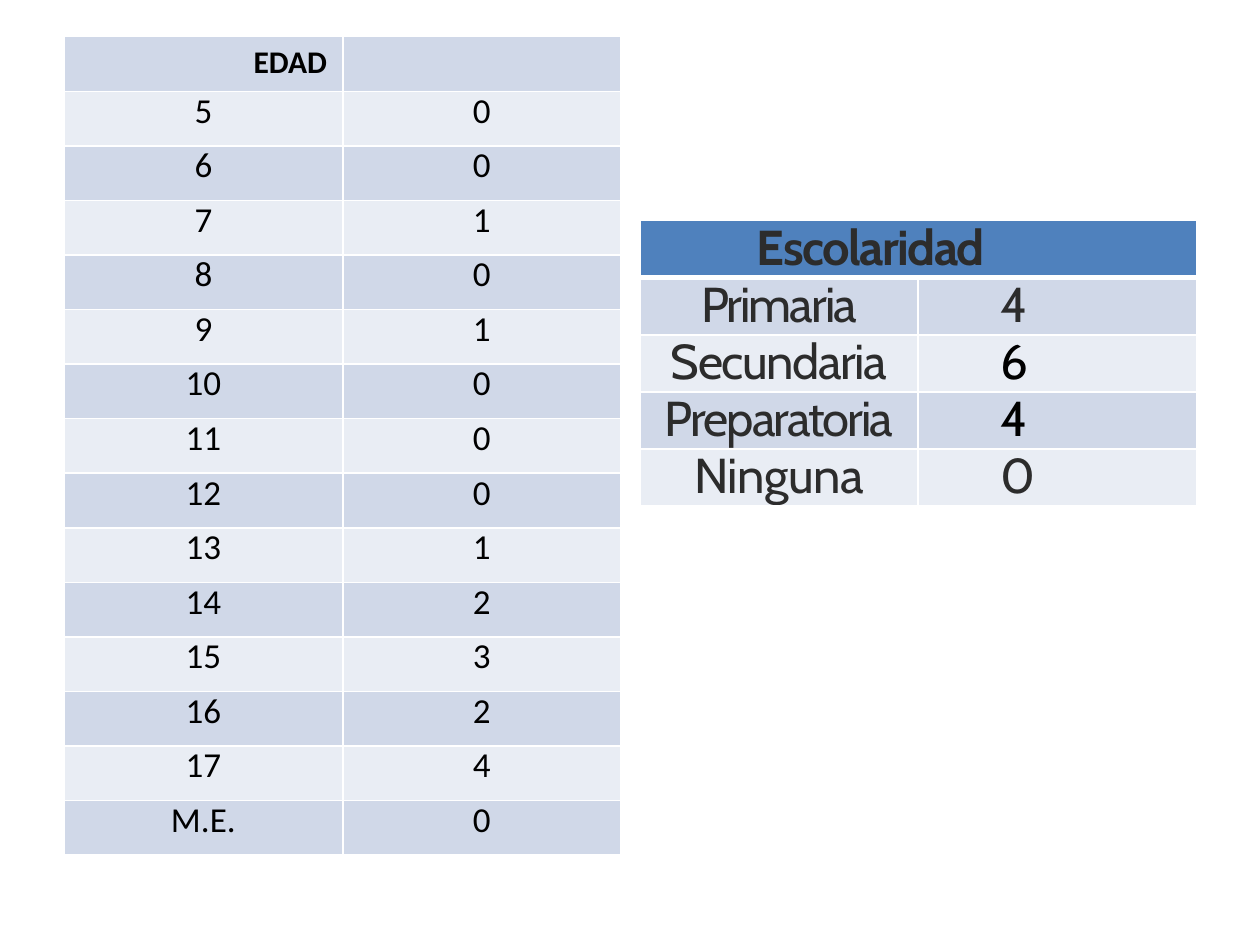
import pptx
import pptx.dml.color
import pptx.enum.text
import pptx.oxml
import pptx.oxml.ns
import pptx.util

Cm = pptx.util.Cm
Pt = pptx.util.Pt
ALIGN = pptx.enum.text.PP_ALIGN


def color(hex_string):
    return pptx.dml.color.RGBColor.from_string(hex_string)


class SlideBuilder:
    BANDS = ("D0D8E8", "E9EDF4")
    HEADER = "4F81BD"
    BORDER = "FFFFFF"
    BLACK = "000000"
    GRAY = "2C2C2C"

    def __init__(self, presentation):
        self.slide = presentation.slides.add_slide(presentation.slide_layouts[6])

    def table(self, left, top, column_widths, row_height, row_count):
        frame = self.slide.shapes.add_table(
            row_count, len(column_widths), Cm(left), Cm(top),
            Cm(sum(column_widths)), Cm(row_height * row_count))
        table = frame.table
        for column, width in zip(table.columns, column_widths):
            column.width = Cm(width)
        for row in table.rows:
            row.height = Cm(row_height)
        return table

    def cell(self, cell, fill, top_border=1, bottom_border=1):
        """Give a cell its borders and then its fill, in schema order."""
        properties = cell._tc.get_or_add_tcPr()
        borders = {"lnL": 1, "lnR": 1, "lnT": top_border, "lnB": bottom_border}
        for side, width in borders.items():
            properties.append(pptx.oxml.parse_xml(
                f'<a:{side} {pptx.oxml.ns.nsdecls("a")} w="{Pt(width)}"><a:solidFill>'
                f'<a:srgbClr val="{self.BORDER}"/></a:solidFill></a:{side}>'))
        cell.fill.solid()
        cell.fill.fore_color.rgb = color(fill)

    def text(self, cell, text, size, font, text_color, bold=False, align=ALIGN.CENTER,
             line=None, tracking=0, margins=(0, 0, 0, 0)):
        """Write one run; margins are left, top, right and bottom in centimetres."""
        (cell.margin_left, cell.margin_top,
         cell.margin_right, cell.margin_bottom) = map(Cm, margins)
        paragraph = cell.text_frame.paragraphs[0]
        paragraph.alignment = align
        if line:
            paragraph.line_spacing = Pt(line)
        run = paragraph.add_run()
        run.text = text
        run.font.size = Pt(size)
        run.font.name = font
        run.font.bold = bold
        run.font.color.rgb = color(text_color)
        if tracking:
            run._r.get_or_add_rPr().set("spc", str(round(tracking * 100)))

    def age_table(self, counts):
        table = self.table(1.29, 0.74, (5.62, 5.6), 1.1, len(counts) + 1)
        for index, row in enumerate(table.rows):
            for cell in row.cells:
                self.cell(cell, self.BANDS[index % 2])
        self.text(table.cell(0, 0), "EDAD", 18, "Calibri", self.BLACK, bold=True,
                  align=ALIGN.RIGHT, margins=(0.25, 0.13, 0.32, 0.13))
        for index, values in enumerate(counts, 1):
            for column, value in enumerate(values):
                self.text(table.cell(index, column), value, 20, "Calibri",
                          self.BLACK, line=23.6)

    def schooling_table(self, title, levels):
        table = self.table(12.9, 4.45, (5.61, 5.61), 1.04, len(levels) + 1)
        for cell in table.rows[0].cells:
            self.cell(cell, self.HEADER, bottom_border=3)
        table.cell(0, 0).merge(table.cell(0, 1))
        self.text(table.cell(0, 0), title, 28, "Cabin", self.GRAY, bold=True,
                  align=ALIGN.LEFT, line=32.5, tracking=-0.9, margins=(2.36, 0, 0, 0))
        for index, (level, tracking, count, count_color) in enumerate(levels, 1):
            for cell in table.rows[index].cells:
                self.cell(cell, self.BANDS[(index - 1) % 2],
                          top_border=3 if index == 1 else 1)
            self.text(table.cell(index, 0), level, 28, "Cabin", self.GRAY,
                      line=32.6, tracking=tracking)
            self.text(table.cell(index, 1), count, 28, "Cabin", count_color,
                      align=ALIGN.LEFT, line=32.6, margins=(1.65, 0, 0, 0))


def main():
    presentation = pptx.Presentation()
    presentation.slide_width = Cm(25.4)
    presentation.slide_height = Cm(19.05)
    builder = SlideBuilder(presentation)

    ages = [str(age) for age in range(5, 18)] + ["M.E."]
    builder.age_table(list(zip(ages, "00101000123240")))
    builder.schooling_table("Escolaridad", [
        ("Primaria", -1.1, "4", builder.GRAY),
        ("Secundaria", -0.8, "6", builder.BLACK),
        ("Preparatoria", -1.1, "4", builder.BLACK),
        ("Ninguna", -0.3, "0", builder.GRAY),
    ])
    presentation.save("out.pptx")


if __name__ == "__main__":
    main()
